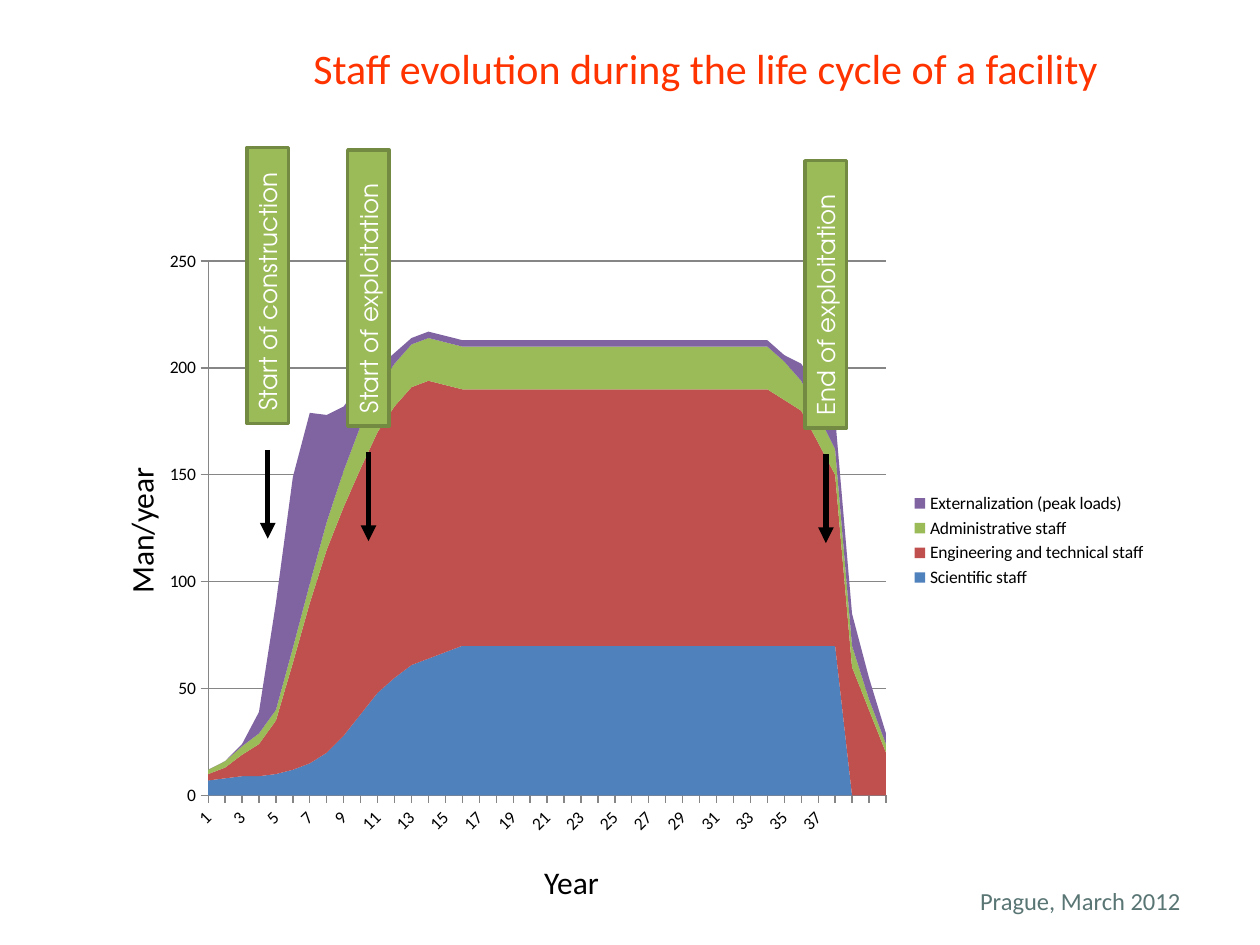
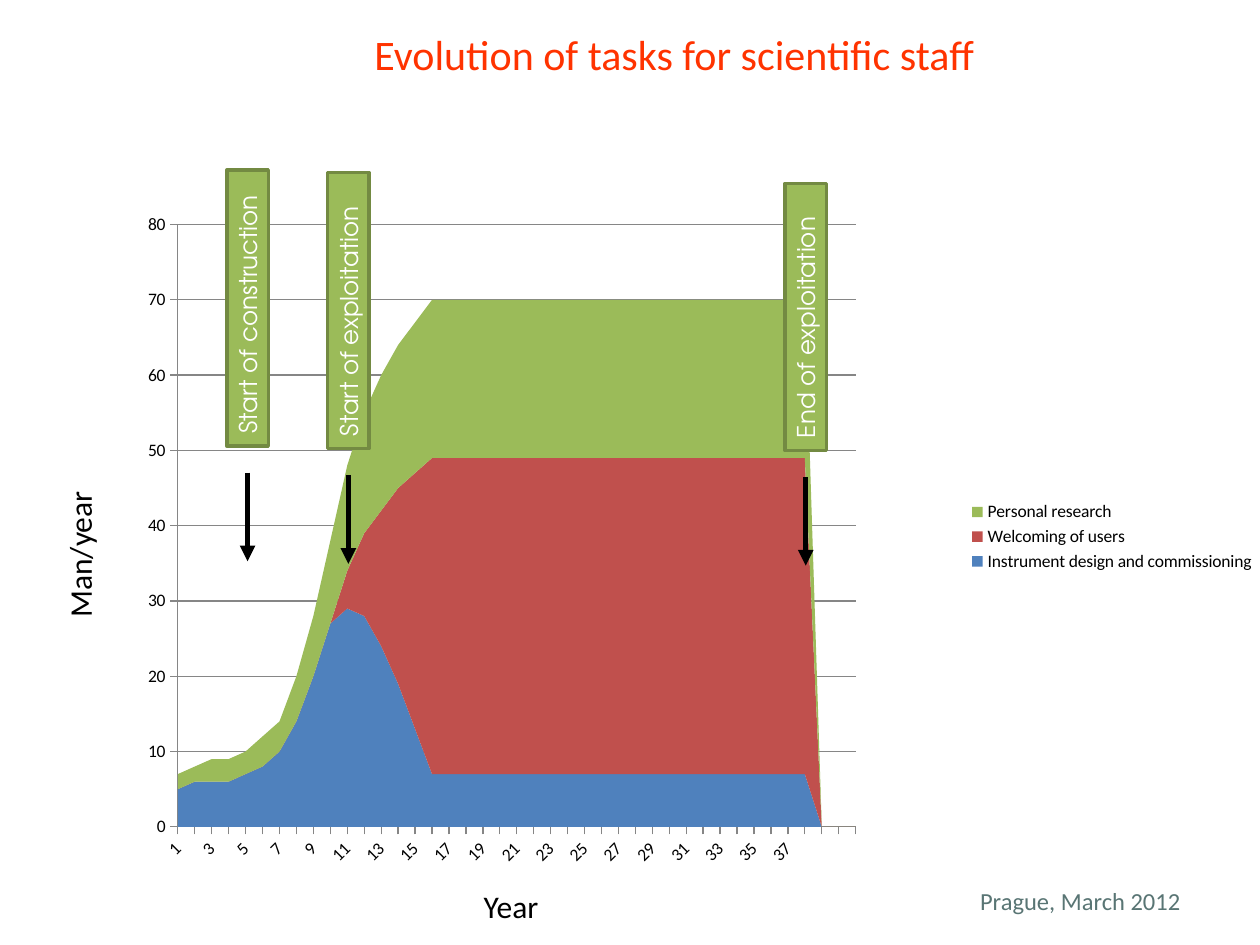
"""Builds two slides on how staff and scientific tasks evolve over a facility's life."""
from dataclasses import dataclass

from lxml import etree
from pptx import Presentation
from pptx.chart.data import CategoryChartData
from pptx.dml.color import RGBColor
from pptx.enum.chart import XL_CHART_TYPE, XL_LEGEND_POSITION, XL_TICK_MARK
from pptx.enum.shapes import MSO_CONNECTOR, MSO_SHAPE
from pptx.enum.text import MSO_ANCHOR, PP_ALIGN
from pptx.oxml.ns import qn
from pptx.util import Inches, Pt

AREA = XL_CHART_TYPE.AREA_STACKED
LEGEND_RIGHT = XL_LEGEND_POSITION.RIGHT
TICK_OUT, TICK_NONE = XL_TICK_MARK.OUTSIDE, XL_TICK_MARK.NONE
STRAIGHT = MSO_CONNECTOR.STRAIGHT
RECTANGLE = MSO_SHAPE.RECTANGLE
LEFT, CENTER = PP_ALIGN.LEFT, PP_ALIGN.CENTER
MIDDLE = MSO_ANCHOR.MIDDLE

COLUMNS, ROWS = 100, 75
CELL = Inches(0.1)
TITLE_ONLY = 5


@dataclass(frozen=True)
class Theme:
    """Colours, fonts and type sizes of both slides."""
    title: str = "FF3300"
    footer: str = "597574"
    ink: str = "000000"
    white: str = "FFFFFF"
    milestone: str = "9BBB59"
    milestone_edge: str = "738A42"
    grid: str = "868686"
    areas: tuple = ("4F81BD", "C0504D", "9BBB59", "8064A2")
    font: str = "Calibri"
    milestone_font: str = "TeX Gyre Adventor"
    title_size: int = 24
    axis_title_size: int = 18
    small_size: int = 14
    chart_size: int = 10


THEME = Theme()

YEARS = [str(year) for year in range(1, 39)]
MILESTONES = (
    ("Start of construction", 21.25, 11.7, 21.9),
    ("Start of exploitation", 29.25, 11.9, 21.9),
    ("End of exploitation", 65.55, 12.75, 21.2),
)
MILESTONE_WIDTH = 3.3
ARROW_GAP, ARROW_LENGTH = 2.1, 7.05

STAFF = {
    "Scientific staff":
        [7, 8, 9, 9, 10, 12, 15, 20, 28, 38, 48, 55, 61, 64, 67]
        + [70] * 23 + [None] * 3,
    "Engineering and technical staff":
        [3, 5, 10, 15, 25, 50, 75, 95, 107, 115, 122, 127, 130, 130, 125]
        + [120] * 19 + [115, 110, 95, 80, 60, 40, 20],
    "Administrative staff":
        [2, 3, 4, 5, 5, 7, 9, 13, 17] + [20] * 25 + [18, 14, 13, 12, 10, 5, 4],
    "Externalization (peak loads)":
        [0, 0, 1, 10, 50, 80, 80, 50, 30, 20, 10, 5]
        + [3] * 23 + [8, 12, 15, 15, 10, 5],
}
TASKS = {
    "Instrument design and commissioning":
        [5, 6, 6, 6, 7, 8, 10, 14, 20, 27, 29, 28, 24, 19, 13]
        + [7] * 23 + [None] * 3,
    "Welcoming of users":
        [None] * 10 + [5, 11, 18, 26, 34] + [42] * 23 + [None] * 3,
    "Personal research":
        [2, 2, 3, 3, 3, 4, 4, 6, 8, 11, 14, 16, 18, 19, 20]
        + [21] * 23 + [0] * 3,
}


def cells(*counts):
    """Turn grid counts into lengths."""
    return [round(count * CELL) for count in counts]


def apply(target, formats):
    """Set each named attribute of the target."""
    for name, value in formats.items():
        setattr(target, name, value)


def style_font(font, size, color, family=THEME.font):
    """Give a font its size, colour and family."""
    apply(font, {"size": Pt(size), "name": family, "bold": False})
    font.color.rgb = RGBColor.from_string(color)


def style_line(line, color, width):
    """Give a line its colour and width in points."""
    line.color.rgb = RGBColor.from_string(color)
    line.width = Pt(width)


def write(shape, words, size, color, family=THEME.font, align=LEFT, wrap=False):
    """Write one formatted paragraph into a shape."""
    frame = shape.text_frame
    frame.text = words
    apply(frame, {"word_wrap": wrap, "vertical_anchor": MIDDLE})
    frame.paragraphs[0].alignment = align
    style_font(frame.paragraphs[0].runs[0].font, size, color, family)


def add_title(slide, words, frame):
    """Place and format the slide title."""
    title = slide.shapes.title
    apply(title, dict(zip(("left", "top", "width", "height"), cells(*frame))))
    write(title, words, THEME.title_size, THEME.title, align=CENTER)


def add_label(slide, words, frame, size, color, rotation=0):
    """Add a one-line text box."""
    label = slide.shapes.add_textbox(*cells(*frame))
    label.rotation = rotation
    write(label, words, size, color)


def add_milestone(slide, words, center, top, length):
    """Add an upright milestone box and the arrow below it."""
    box = slide.shapes.add_shape(RECTANGLE, *cells(
        center - length / 2, top + (length - MILESTONE_WIDTH) / 2,
        length, MILESTONE_WIDTH))
    box.rotation = 270
    box.shadow.inherit = False
    box.fill.solid()
    box.fill.fore_color.rgb = RGBColor.from_string(THEME.milestone)
    style_line(box.line, THEME.milestone_edge, 2)
    write(box, words, THEME.small_size, THEME.white, THEME.milestone_font, wrap=True)

    start = top + length + ARROW_GAP
    arrow = slide.shapes.add_connector(
        STRAIGHT, *cells(center, start, center, start + ARROW_LENGTH))
    style_line(arrow.line, THEME.ink, 3)
    etree.SubElement(arrow.line._get_or_add_ln(), qn("a:tailEnd"), type="triangle")
    etree.SubElement(arrow._element.spPr, qn("a:effectLst"))


def place_plot(chart, shares):
    """Fix the inner plot area as shares of the chart."""
    plot_area = chart._chartSpace.chart.plotArea
    for automatic in plot_area.findall(qn("c:layout")):
        plot_area.remove(automatic)
    layout = etree.Element(qn("c:layout"))
    manual = etree.SubElement(layout, qn("c:manualLayout"))
    settings = [("layoutTarget", "inner"), ("xMode", "edge"), ("yMode", "edge")]
    settings += zip("xywh", shares)
    for tag, value in settings:
        etree.SubElement(manual, qn(f"c:{tag}"), val=str(value))
    plot_area.insert(0, layout)


def add_area_chart(slide, series, frame, plot_shares, top_value, step):
    """Add a stacked area chart over the years."""
    data = CategoryChartData()
    data.categories = YEARS
    for name, values in series.items():
        data.add_series(name, values)
    chart = slide.shapes.add_chart(AREA, *cells(*frame), data).chart
    apply(chart, {"has_title": False, "has_legend": True})
    style_font(chart.font, THEME.chart_size, THEME.ink)
    apply(chart.legend, {"position": LEGEND_RIGHT, "include_in_layout": False})
    chart.plots[0].vary_by_categories = False
    for area, color in zip(chart.plots[0].series, THEME.areas):
        area.format.fill.solid()
        area.format.fill.fore_color.rgb = RGBColor.from_string(color)

    years, amounts = chart.category_axis, chart.value_axis
    apply(amounts, {"minimum_scale": 0, "maximum_scale": top_value,
                    "major_unit": step, "has_major_gridlines": True})
    years.has_major_gridlines = False
    style_line(amounts.major_gridlines.format.line, THEME.grid, 0.75)
    for axis in (years, amounts):
        apply(axis, {"major_tick_mark": TICK_OUT, "minor_tick_mark": TICK_NONE})
        style_line(axis.format.line, THEME.grid, 0.75)
        style_font(axis.tick_labels.font, THEME.chart_size, THEME.ink)
    years._element.find(f"{qn('c:txPr')}/{qn('a:bodyPr')}").set("rot", "-2700000")
    for blanks in chart._chartSpace.iter(qn("c:dispBlanksAs")):
        blanks.set("val", "zero")
    place_plot(chart, plot_shares)


def add_evolution_slide(deck, title, title_frame, chart, year_at, amount_at, shift):
    """Add one slide with its chart, axis titles and shifted milestones."""
    slide = deck.slides.add_slide(deck.slide_layouts[TITLE_ONLY])
    add_label(slide, "Prague, March 2012", (76.8, 69.8, 18.1, 3.4),
              THEME.small_size, THEME.footer)
    add_area_chart(slide, *chart)
    add_title(slide, title, title_frame)
    across, down = shift
    for words, center, top, length in MILESTONES:
        add_milestone(slide, words, center + across, top + down, length)
    add_label(slide, "Year", (*year_at, 6.4, 4), THEME.axis_title_size, THEME.ink)
    add_label(slide, "Man/year", (*amount_at, 12.2, 4),
              THEME.axis_title_size, THEME.ink, rotation=270)


def main():
    """Build and save the deck."""
    deck = Presentation()
    deck.slide_width, deck.slide_height = cells(COLUMNS, ROWS)
    add_evolution_slide(
        deck, "Staff evolution during the life cycle of a facility",
        (23.5, 2.9, 65, 5),
        (STAFF, (11.7, 18.8, 80.3, 48.2), (0.06, 0.04, 0.67, 0.88), 250, 50),
        year_at=(42.2, 68), amount_at=(5.1, 40), shift=(0, 0))
    add_evolution_slide(
        deck, "Evolution of tasks for scientific staff",
        (18.3, 1.8, 70.4, 5),
        (TASKS, (4.5, 13.8, 96.1, 57.6), (0.1, 0.07, 0.56, 0.83), 80, 10),
        year_at=(37.4, 69.9), amount_at=(0.2, 41.9), shift=(-1.6, 1.8))
    deck.save("out.pptx")


if __name__ == "__main__":
    main()
